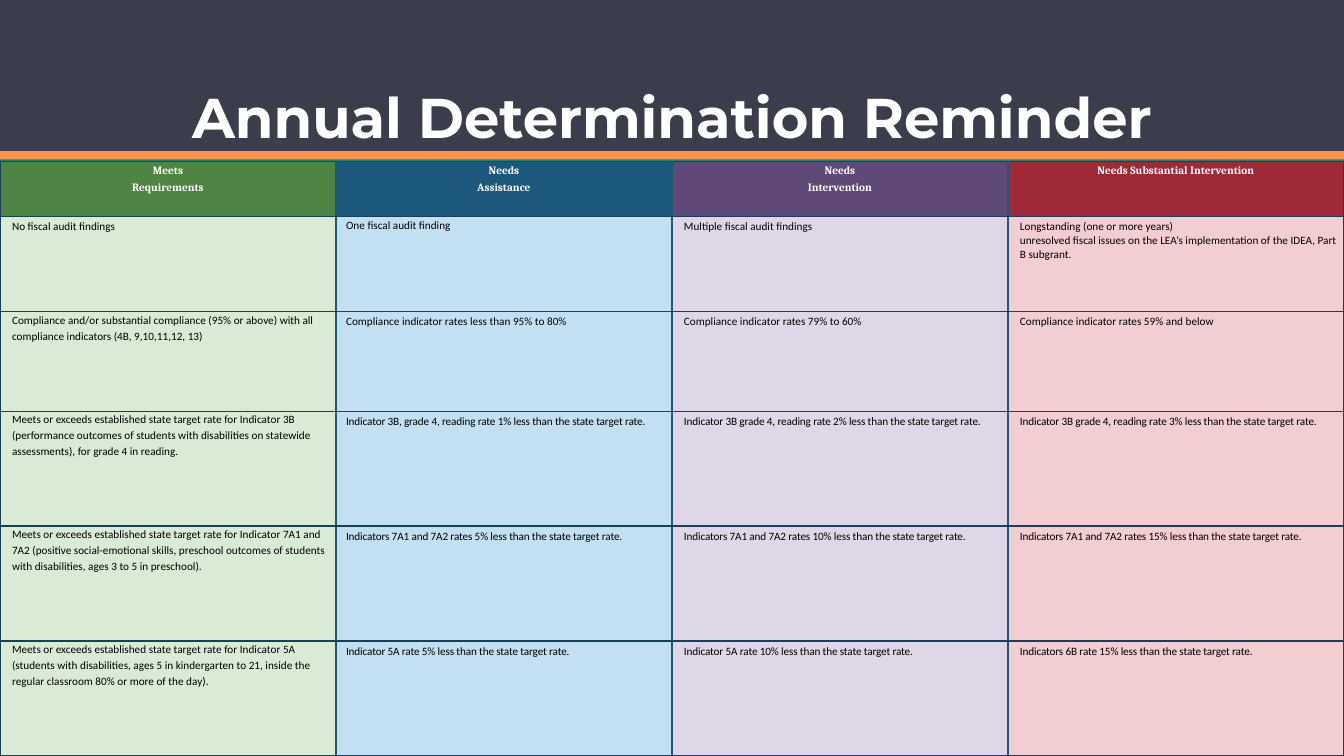
from lxml import etree
from pptx import Presentation
from pptx.dml.color import RGBColor
from pptx.enum.shapes import MSO_SHAPE
from pptx.enum.text import MSO_ANCHOR, PP_ALIGN
from pptx.oxml.ns import qn
from pptx.util import Pt

RECTANGLE = MSO_SHAPE.RECTANGLE
BOTTOM = MSO_ANCHOR.BOTTOM
TOP = MSO_ANCHOR.TOP
CENTER = PP_ALIGN.CENTER
LEFT = PP_ALIGN.LEFT

WHITE = RGBColor(0xFF, 0xFF, 0xFF)
BLACK = RGBColor(0x00, 0x00, 0x00)
SLATE = RGBColor(0x3A, 0x3D, 0x4B)
ORANGE = RGBColor(0xFF, 0x91, 0x4D)
TEAL = RGBColor(0x04, 0x8A, 0x81)
NAVY = RGBColor(0x14, 0x41, 0x5C)
BLUE = RGBColor(0x1B, 0x58, 0x7C)
HEADER_FILLS = [RGBColor(0x4E, 0x85, 0x42), BLUE,
                RGBColor(0x60, 0x48, 0x78), RGBColor(0x9F, 0x29, 0x36)]
BODY_FILLS = [RGBColor(0xD9, 0xEA, 0xD5), RGBColor(0xC3, 0xE0, 0xF2),
              RGBColor(0xDF, 0xD7, 0xE7), RGBColor(0xF2, 0xCD, 0xD1)]

SLIDE_WIDTH, SLIDE_HEIGHT = 960, 540
TABLE_TOP = 115.2
ROW_HEIGHTS = [39.6, 67.7, 71.2, 82.1, 82.1, 82.1]
INDENTS = [5, 3.6, 5, 5]
FIRST_TIGHT_ROW = 3

DETERMINATIONS = [
    ["Meets\nRequirements", "Needs\nAssistance", "Needs\nIntervention",
     "Needs Substantial Intervention"],
    ["No fiscal audit findings", "One fiscal audit finding",
     "Multiple fiscal audit findings",
     "Longstanding (one or more years)\nunresolved fiscal issues on the LEA’s "
     "implementation of the IDEA, Part B subgrant."],
    ["Compliance and/or substantial compliance (95% or above) with all "
     "compliance indicators (4B, 9,10,11,12, 13)",
     "Compliance indicator rates less than 95% to 80%",
     "Compliance indicator rates 79% to 60%",
     "Compliance indicator rates 59% and below"],
    ["Meets or exceeds established state target rate for Indicator 3B "
     "(performance outcomes of students with disabilities on statewide "
     "assessments), for grade 4 in reading.",
     "Indicator 3B, grade 4, reading rate 1% less than the state target rate.",
     "Indicator 3B grade 4, reading rate 2% less than the state target rate.",
     "Indicator 3B grade 4, reading rate 3% less than the state target rate."],
    ["Meets or exceeds established state target rate for Indicator 7A1 and 7A2 "
     "(positive social-emotional skills, preschool outcomes of students with "
     "disabilities, ages 3 to 5 in preschool).",
     "Indicators 7A1 and 7A2 rates 5% less than the state target rate.",
     "Indicators 7A1 and 7A2 rates 10% less than the state target rate.",
     "Indicators 7A1 and 7A2 rates 15% less than the state target rate."],
    ["Meets or exceeds established state target rate for Indicator 5A "
     "(students with disabilities, ages 5 in kindergarten to 21, inside the "
     "regular classroom 80% or more of the day).",
     "Indicator 5A rate 5% less than the state target rate.",
     "Indicator 5A rate 10% less than the state target rate.",
     "Indicators 6B rate 15% less than the state target rate."],
]


def style_font(font, name, size, color, bold):
    font.name = name
    font.size = Pt(size)
    font.color.rgb = color
    font.bold = bold


def add_band(slide, left, top, width, height, color):
    shape = slide.shapes.add_shape(RECTANGLE, Pt(left), Pt(top), Pt(width), Pt(height))
    shape.shadow.inherit = False
    shape.fill.solid()
    shape.fill.fore_color.rgb = color
    shape.line.fill.background()


def add_banner(slide, left, top, width, height):
    stripe = 6.3
    add_band(slide, left, top, width, height, SLATE)
    add_band(slide, left, top + height, width, stripe, ORANGE)
    add_band(slide, left, top + height + stripe - 0.5, width, stripe, TEAL)

    title = slide.shapes.add_textbox(Pt(left), Pt(top), Pt(width), Pt(height + 2.9))
    text_frame = title.text_frame
    text_frame.word_wrap = True
    text_frame.vertical_anchor = BOTTOM
    text_frame.text = "Annual Determination Reminder"
    paragraph = text_frame.paragraphs[0]
    paragraph.alignment = CENTER
    paragraph.line_spacing = 0.9
    style_font(paragraph.runs[0].font, "Montserrat", 40, WHITE, True)


def set_borders(cell, column, last_column):
    properties = cell._tc.get_or_add_tcPr()
    sides = {"lnL": NAVY if column == 0 else BLUE,
             "lnR": NAVY if column == last_column else BLUE,
             "lnT": NAVY, "lnB": NAVY}
    for side, color in sides.items():
        line = etree.SubElement(properties, qn(f"a:{side}"), w=str(Pt(1)))
        fill = etree.SubElement(line, qn("a:solidFill"))
        etree.SubElement(fill, qn("a:srgbClr"), val=str(color))


def format_header(paragraph):
    paragraph.alignment = CENTER
    paragraph.line_spacing = 1.28
    style_font(paragraph.runs[0].font, "Cambria", 8, WHITE, True)


def format_body(paragraph, row, column, is_continuation):
    properties = paragraph._p.get_or_add_pPr()
    properties.set("marL", str(Pt(INDENTS[column])))
    properties.set("indent", "0")
    paragraph.alignment = LEFT
    compact_column = 1 if row == 1 else 0
    paragraph.line_spacing = 1.15 if column == compact_column else 1.25
    if is_continuation:
        paragraph.line_spacing = 0.99
        paragraph.space_before = Pt(0.1)
    run = paragraph.runs[0]
    style_font(run.font, "Calibri", 8, BLACK, False)
    if row >= FIRST_TIGHT_ROW and column > 0:
        run._r.get_or_add_rPr().set("spc", "-10")


def fill_cell(cell, row, column, text):
    set_borders(cell, column, len(BODY_FILLS) - 1)
    cell.fill.solid()
    cell.fill.fore_color.rgb = (HEADER_FILLS if row == 0 else BODY_FILLS)[column]
    cell.margin_left = cell.margin_right = Pt(3.6)
    cell.margin_top = cell.margin_bottom = Pt(0)
    cell.vertical_anchor = TOP
    cell.text_frame.text = text
    for index, paragraph in enumerate(cell.text_frame.paragraphs):
        if row == 0:
            format_header(paragraph)
        else:
            format_body(paragraph, row, column, index > 0)


def add_determination_table(slide, left, top, width, height):
    columns = len(BODY_FILLS)
    frame = slide.shapes.add_table(len(DETERMINATIONS), columns,
                                   Pt(left), Pt(top), Pt(width), Pt(height))
    table = frame.table
    table.first_row = False
    table.horz_banding = False
    for column in table.columns:
        column.width = Pt(width / columns)
    for row, row_height in zip(table.rows, ROW_HEIGHTS):
        row.height = Pt(row_height)
    for row, texts in enumerate(DETERMINATIONS):
        for column, text in enumerate(texts):
            fill_cell(table.cell(row, column), row, column, text)


def main():
    presentation = Presentation()
    presentation.slide_width = Pt(SLIDE_WIDTH)
    presentation.slide_height = Pt(SLIDE_HEIGHT)
    slide = presentation.slides.add_slide(presentation.slide_layouts[6])
    add_banner(slide, 0, 0, SLIDE_WIDTH, 108)
    add_determination_table(slide, 0, TABLE_TOP, SLIDE_WIDTH, sum(ROW_HEIGHTS))
    presentation.save("out.pptx")


if __name__ == "__main__":
    main()
